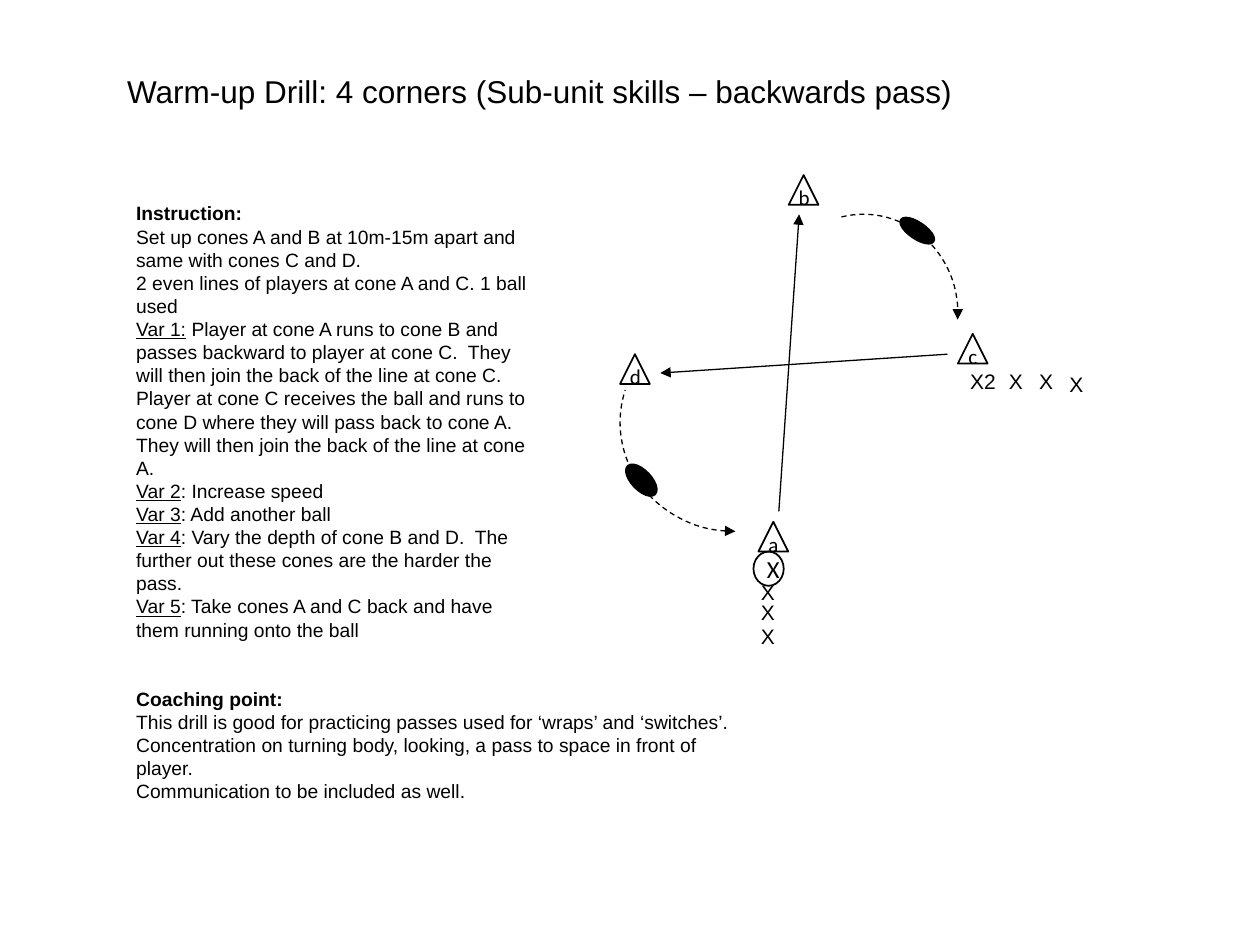
from pptx import Presentation
from pptx.dml.color import RGBColor
from pptx.enum.dml import MSO_LINE
from pptx.enum.shapes import MSO_CONNECTOR, MSO_SHAPE
from pptx.enum.text import MSO_ANCHOR, MSO_AUTO_SIZE, PP_ALIGN
from pptx.oxml.ns import qn
from pptx.util import Cm, Pt
from lxml.etree import SubElement

BLACK = RGBColor(0x00, 0x00, 0x00)

INSTRUCTIONS = [
    ("", "Set up cones A and B at 10m-15m apart and same with cones C and D."),
    ("", "2 even lines of players at cone A and C. 1 ball used"),
    ("Var 1:", " Player at cone A runs to cone B and passes backward to player at cone C.  "
               "They will then join the back of the line at cone C."),
    ("", "Player at cone C receives the ball and runs to cone D where they will pass back "
         "to cone A. They will then join the back of the line at cone A."),
    ("Var 2", ": Increase speed"),
    ("Var 3", ": Add another ball"),
    ("Var 4", ": Vary the depth of cone B and D.  The further out these cones are the "
              "harder the pass."),
    ("Var 5", ": Take cones A and C back and have them running onto the ball"),
]
COACHING_POINTS = [
    ("", "This drill is good for practicing passes used for ‘wraps’ and ‘switches’."),
    ("", "Concentration on turning body, looking, a pass to space in front of player."),
    ("", "Communication to be included as well."),
]
CONES = {"a": (2.79, 6.99), "b": (3.4, 0), "c": (6.81, 3.2), "d": (0, 3.61)}
BALLS = [(5.61, 0.97, 0.76, 0.3, 34), (0.05, 5.97, 0.76, 0.36, 46.1)]
RUNS = [(3.2, 6.78, 3.61, 0.79), (6.6, 3.61, 0.81, 3.99)]
PASSES = [
    ((3, 0.79, 3.81, 3.99), 0, (154.32, 2.33), "a:tailEnd"),
    ((0, 2.79, 4.6, 4.39), 180, (161.64, 9.9), "a:headEnd"),
]
PLAYERS = [
    ("X", 2.59, 8.03), ("X", 2.59, 8.43), ("X", 2.59, 8.92),
    ("X2", 6.81, 3.78), ("X", 7.59, 3.78), ("X", 8.2, 3.78), ("X", 8.81, 3.84),
]


def set_attributes(target, values):
    """Set each named attribute of the target."""
    for name, value in values.items():
        setattr(target, name, value)


def place(shape, box):
    """Move and size a shape to a box given in centimetres."""
    names = ("left", "top", "width", "height")
    set_attributes(shape, {name: Cm(value) for name, value in zip(names, box)})


def add_run(paragraph, text, size, font="Arial", **style):
    """Add a black run of text to a paragraph."""
    run = paragraph.add_run()
    run.text = text
    set_attributes(run.font, {"size": Pt(size), "name": font, **style})
    run.font.color.rgb = BLACK


def add_arrowhead(shape, end):
    """Put a triangle arrowhead on one end of a line."""
    SubElement(shape.line._get_or_add_ln(), qn(end), type="triangle")


def add_outline(slide, kind, box, width):
    """Add an unfilled shape with a black outline."""
    shape = slide.shapes.add_shape(kind, *map(Cm, box))
    shape.shadow.inherit = False
    shape.fill.background()
    shape.line.color.rgb = BLACK
    shape.line.width = Pt(width)
    return shape


def add_marker(slide, kind, box, text, size):
    """Add an outlined shape with a centred letter."""
    shape = add_outline(slide, kind, box, 1)
    shape.text_frame.vertical_anchor = MSO_ANCHOR.MIDDLE
    paragraph = shape.text_frame.paragraphs[0]
    paragraph.alignment = PP_ALIGN.CENTER
    add_run(paragraph, text, size, "Calibri")


def fill_title(placeholder, box, text):
    """Place the slide title on one left-aligned line."""
    place(placeholder, box)
    set_attributes(placeholder.text_frame, {
        "word_wrap": False,
        "auto_size": MSO_AUTO_SIZE.SHAPE_TO_FIT_TEXT,
        "vertical_anchor": MSO_ANCHOR.TOP,
    })
    paragraph = placeholder.text_frame.paragraphs[0]
    paragraph.alignment = PP_ALIGN.LEFT
    add_run(paragraph, text, 18)


def fill_notes(placeholder, box, heading, lines):
    """Place a bold heading and its lines, with underlined lead words."""
    place(placeholder, box)
    frame = placeholder.text_frame
    set_attributes(frame, {"word_wrap": True, "auto_size": MSO_AUTO_SIZE.NONE})
    add_run(frame.paragraphs[0], heading, 11, bold=True)
    for lead, text in lines:
        paragraph = frame.add_paragraph()
        if lead:
            add_run(paragraph, lead, 11, underline=True)
        add_run(paragraph, text, 11)
    for paragraph in frame.paragraphs:
        paragraph.space_before = Pt(0)
        properties = paragraph._p.get_or_add_pPr()
        properties.set("marL", "0")
        properties.set("indent", "0")
        SubElement(properties, qn("a:buNone"))


def draw_drill(slide, left, top):
    """Draw cones, players, runs and passes from a top-left corner."""
    for letter, (x, y) in CONES.items():
        box = (left + x, top + y, 0.6, 0.6)
        add_marker(slide, MSO_SHAPE.ISOSCELES_TRIANGLE, box, letter, 12)
    for x1, y1, x2, y2 in RUNS:
        ends = (left + x1, top + y1, left + x2, top + y2)
        connector = slide.shapes.add_connector(MSO_CONNECTOR.STRAIGHT, *map(Cm, ends))
        connector.line.color.rgb = BLACK
        connector.line.width = Pt(0.75)
        add_arrowhead(connector, "a:tailEnd")
        SubElement(connector._element.spPr, qn("a:effectLst"))
    for text, x, y in PLAYERS:
        box = (left + x, top + y, 1.19, 0.76)
        label = slide.shapes.add_textbox(*map(Cm, box))
        label.text_frame.word_wrap = True
        add_run(label.text_frame.paragraphs[0], text, 12)
    for (x, y, width, height), rotation, angles, end in PASSES:
        arc = add_outline(slide, MSO_SHAPE.ARC, (left + x, top + y, width, height), 0.75)
        arc.rotation = rotation
        arc.adjustments[0], arc.adjustments[1] = angles
        arc.line.dash_style = MSO_LINE.DASH
        add_arrowhead(arc, end)
    for x, y, width, height, rotation in BALLS:
        ball = add_outline(slide, MSO_SHAPE.OVAL, (left + x, top + y, width, height), 2)
        ball.rotation = rotation
        ball.fill.solid()
        ball.fill.fore_color.rgb = BLACK
    add_marker(slide, MSO_SHAPE.OVAL, (left + 2.69, top + 7.59, 0.61, 0.69), "X", 14)


def main():
    """Build and save the drill slide."""
    presentation = Presentation()
    presentation.slide_width = Cm(25.4)
    presentation.slide_height = Cm(19.05)
    slide = presentation.slides.add_slide(presentation.slide_layouts[3])
    title, instruction, coaching = slide.placeholders
    fill_title(title, (2.31, 1.32, 17.3, 1.02),
               "Warm-up Drill: 4 corners (Sub-unit skills – backwards pass)")
    fill_notes(instruction, (2.49, 3.94, 8.61, 9.65), "Instruction:", INSTRUCTIONS)
    fill_notes(coaching, (2.49, 13.72, 13.03, 3.38), "Coaching point:", COACHING_POINTS)
    draw_drill(slide, 12.5, 3.53)
    presentation.save("out.pptx")


if __name__ == "__main__":
    main()
